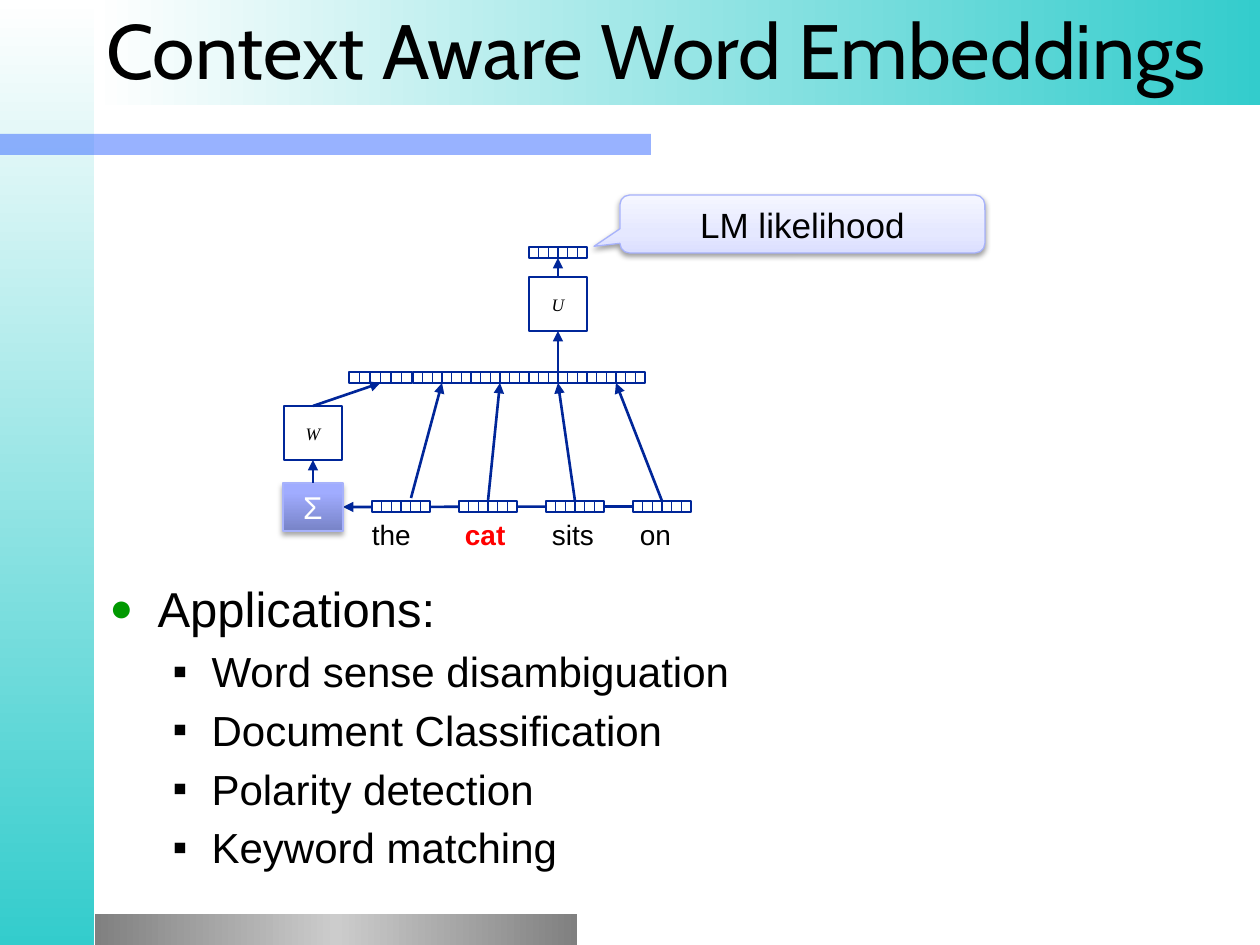
from lxml.etree import SubElement as Sub
from pptx import Presentation
from pptx.dml.color import RGBColor
from pptx.enum.shapes import MSO_CONNECTOR as Link, MSO_SHAPE as Kind
from pptx.enum.text import MSO_ANCHOR as Anchor, MSO_AUTO_SIZE as Auto, PP_ALIGN as Align
from pptx.oxml.ns import qn
from pptx.util import Pt

PX = 914400 / 126
NAVY, WHITE, TEAL, LILAC, BLACK = "002699", "FFFFFF", "33CCCC", "A7B2FB", "000000"
hue = RGBColor.from_string


def box(home, kind, area, fill, edge=None, wide=1, turn=0, text="", size=10, face="Arial", ink=BLACK):
    shape = home.add_shape(kind, *[round(v * PX) for v in area])
    shape.shadow.inherit = False
    if isinstance(fill, str):
        shape.fill.solid()
        shape.fill.fore_color.rgb = hue(fill)
    else:
        shape.fill.gradient()
        stops = shape.element.spPr.find(qn("a:gradFill")).find(qn("a:gsLst"))
        stops.clear()
        for at, tone in fill:
            stop = Sub(stops, qn("a:gs"), pos=str(at * 1000))
            Sub(stop, qn("a:srgbClr"), val=tone)
        shape.fill.gradient_angle = -turn % 360
    if edge:
        shape.line.color.rgb = hue(edge)
        shape.line.width = Pt(wide)
    else:
        shape.line.fill.background()
    if text:
        frame = shape.text_frame
        frame.text = text
        frame.word_wrap = True
        frame.vertical_anchor = Anchor.MIDDLE
        frame.paragraphs[0].alignment = Align.CENTER
        font = frame.paragraphs[0].runs[0].font
        font.size, font.name, font.color.rgb = Pt(size), face, hue(ink)
    return shape


def line(home, ends, wide, start=None, stop=None, head=True):
    link = home.add_connector(Link.STRAIGHT, *[round(v * PX) for v in ends])
    link.line.color.rgb = hue(NAVY)
    link.line.width = Pt(wide)
    if start:
        link.begin_connect(*start)
    if stop:
        link.end_connect(*stop)
    if head:
        Sub(link.line._get_or_add_ln(), qn("a:tailEnd"), type="triangle")
    Sub(link.element.spPr, qn("a:effectLst"))
    return link


deck = Presentation()
deck.slide_width, deck.slide_height = round(1260 * PX), round(945 * PX)
slide = deck.slides.add_slide(deck.slide_layouts[1])
shapes = slide.shapes
title, body = slide.placeholders

fade = [(0, WHITE), (100, TEAL)]
steel = [(0, "808080"), (50, "CCCCCC"), (100, "808080")]
box(shapes, Kind.RECTANGLE, (0, 0, 94, 945), fade, turn=90)
band = box(shapes, Kind.RECTANGLE, (0, 134, 651, 21), "3366FF")
tone = band.element.spPr.find(qn("a:solidFill"))[0]
Sub(tone, qn("a:alpha"), val="50000")
box(shapes, Kind.RECTANGLE, (95, 914, 482, 31), steel)
box(shapes, Kind.RECTANGLE, (94, 0, 1167, 105), fade)

for holder, area in ((title, (94, -4, 1167, 105)), (body, (97, 572, 1071, 307))):
    shapes.element.append(holder.element)
    holder.left, holder.top, holder.width, holder.height = [round(v * PX) for v in area]
    holder.text_frame.auto_size = Auto.NONE

title.text_frame.text = "Context Aware Word Embeddings"
title.text_frame.vertical_anchor = Anchor.MIDDLE
head = title.text_frame.paragraphs[0]
head.alignment = Align.LEFT
font = head.runs[0].font
font.size, font.name, font.color.rgb = Pt(44), "Cabin", hue(BLACK)

looks = [(48, 48, 28, "009900", 80, "●"), (102, 39, 24, BLACK, 100, "▪")]
body.text_frame.text = "\n".join((
    "Applications:",
    "Word sense disambiguation",
    "Document Classification",
    "Polarity detection",
    "Keyword matching",
))
for i, para in enumerate(body.text_frame.paragraphs):
    para.level = min(i, 1)
    left, hang, size, tint, scale, mark = looks[para.level]
    font = para.runs[0].font
    font.size, font.name, font.color.rgb = Pt(size), "Arial", hue(BLACK)
    props = para._p.get_or_add_pPr()
    props.set("marL", str(round(left * PX)))
    props.set("indent", str(round(-hang * PX)))
    Sub(Sub(props, qn("a:buClr")), qn("a:srgbClr"), val=tint)
    Sub(props, qn("a:buSzPct"), val=str(scale * 1000))
    Sub(props, qn("a:buFont"), typeface="Arial")
    Sub(props, qn("a:buChar"), char=mark)

spots = [(349, 372, 63)]
spots += [(413 + 58 * i, 372, 58) for i in range(4)]
spots += [(372 + 87 * i, 501, 58) for i in range(4)]
spots += [(529, 247, 58)]
strips, groups = [], []
for x, y, w in spots:
    group = shapes.add_group_shape()
    strips.append(box(group.shapes, Kind.RECTANGLE, (x, y, w, 11), WHITE, NAVY))
    for i in range(1, 6):
        cut = x + w * i / 6
        line(group.shapes, (cut, y, cut, y + 11), 0.75, head=False)
    groups.append(group)
joint, tops, words, out = strips[0], strips[1:5], strips[5:9], strips[9]

unit, mix = [
    box(shapes, Kind.RECTANGLE, (x, y, 58, 54), WHITE, NAVY, 1.5, text=text, face="Times New Roman")
    for x, y, text in ((529, 277, "U"), (284, 406, "W"))
]
for shape in (unit, mix):
    shape.text_frame.paragraphs[0].runs[0].font.italic = True

sigma = box(shapes, Kind.RECTANGLE, (283, 483, 60, 48),
            [(0, "7883C7"), (80, "A0ACFF"), (100, "A2AEFF")], LILAC, 0.75, 270, "Σ", 18, ink=WHITE)
note = box(shapes, Kind.ROUNDED_RECTANGULAR_CALLOUT, (620, 195, 365, 58),
           [(0, "DBDFFF"), (35, "E5E8FF"), (100, "F5F6FF")], LILAC, 0.75, 270, "LM likelihood", 20)
for i, value in enumerate((-0.571, 0.385, 0.167)):
    note.adjustments[i] = value
for shape, dim, drop in ((sigma, 35, 1.8), (note, 38, 1.6)):
    glow = Sub(shape.element.spPr.find(qn("a:effectLst")), qn("a:outerShdw"),
               blurRad=str(Pt(3.1)), dist=str(Pt(drop)), dir="5400000", rotWithShape="0")
    Sub(Sub(glow, qn("a:srgbClr"), val=BLACK), qn("a:alpha"), val=str(dim * 1000))

line(shapes, (411, 498, 442, 383), 1.5, stop=(tops[0], 2))
pairs = [(word, top) for word, top in zip(words[1:], tops[1:])]
pairs += [(tops[2], unit), (unit, out), (sigma, mix), (mix, joint)]
for low, high in pairs:
    line(shapes, (0, 0, 0, 0), 1.5, (low, 0), (high, 2))
flow = line(shapes, (633, 507, 343, 507), 1.5, (words[3], 1), (sigma, 3))
groups[0].element.addprevious(flow.element)

label = shapes.add_textbox(*[round(v * PX) for v in (372, 518, 328, 34)])
frame = label.text_frame
frame.word_wrap = True
frame.margin_left = frame.margin_top = frame.margin_right = frame.margin_bottom = 0
para = frame.paragraphs[0]
para.text = "the\t"
para.add_run().text = "cat"
para.add_run().text = "\tsits\ton"
for run in para.runs:
    run.font.size, run.font.name, run.font.color.rgb = Pt(16), "Arial", hue(BLACK)
para.runs[1].font.bold = True
para.runs[1].font.color.rgb = hue("FF0000")
tabs = Sub(para._p.get_or_add_pPr(), qn("a:tabLst"))
for x in (93, 180, 268):
    Sub(tabs, qn("a:tab"), pos=str(round(x * PX)), algn="l")

deck.save("out.pptx")
